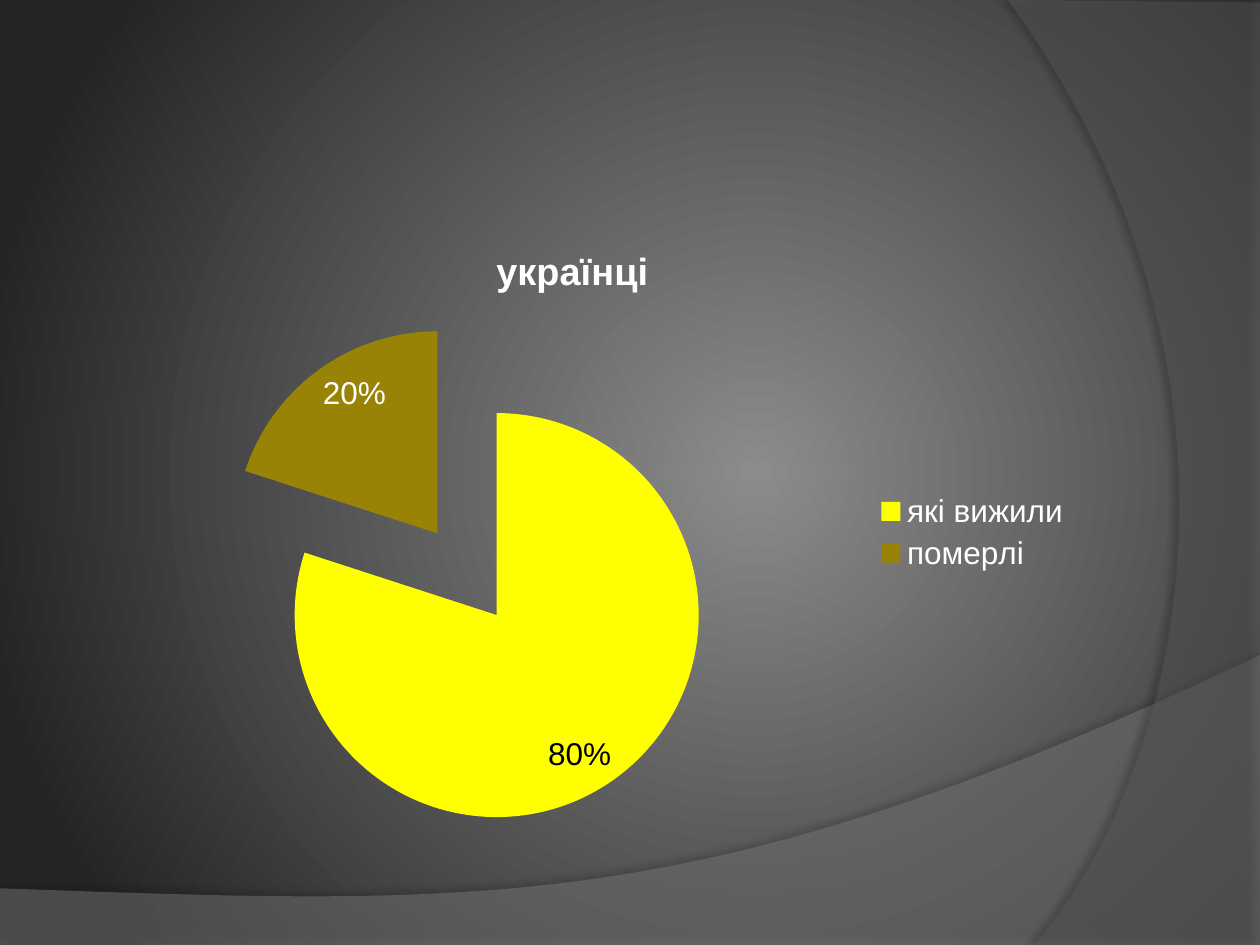
from lxml.etree import SubElement
from pptx import Presentation
from pptx.chart.data import CategoryChartData
from pptx.dml.color import RGBColor
from pptx.enum.chart import XL_CHART_TYPE, XL_LABEL_POSITION, XL_LEGEND_POSITION
from pptx.oxml import parse_xml
from pptx.oxml.ns import nsdecls, qn
from pptx.util import Inches, Pt

HUES = {
    "glow": "8B8B8B", "edge": "252525", "wave": "7F7F7F", "arc": "5E5E5E",
    "alive": "FFFF00", "dead": "998307", "light": "FFFFFF", "dark": "000000",
}
FONT = "Arial"


def style(font, size=18, hue="light", bold=False):
    """Set the face, size, colour and weight of a font."""
    font.name, font.size, font.bold = FONT, Pt(size), bold
    font.color.rgb = RGBColor.from_string(HUES[hue])


def write(frame, text, **form):
    """Put formatted text in a text frame."""
    run = frame.paragraphs[0].add_run()
    run.text = text
    style(run.font, **form)


def backdrop(slide):
    """Fill the background with an off-centre round gradient."""
    stops = "".join(
        f'<a:gs pos="{pos}"><a:srgbClr val="{HUES[hue]}"/></a:gs>'
        for pos, hue in ((0, "glow"), (100000, "edge")))
    back = parse_xml(
        f'<p:bg {nsdecls("p", "a")}><p:bgPr><a:gradFill rotWithShape="1">'
        f'<a:gsLst>{stops}</a:gsLst><a:path path="circle">'
        '<a:fillToRect l="60000" t="50000" r="40000" b="50000"/></a:path>'
        '</a:gradFill><a:effectLst/></p:bgPr></p:bg>')
    slide.element.cSld.insert(0, back)


def curve(start, pull, push, end, steps=60):
    """Return points along a cubic curve."""
    points = []
    for step in range(steps + 1):
        t = step / steps
        parts = ((1 - t) ** 3, 3 * t * (1 - t) ** 2, 3 * t * t * (1 - t), t ** 3)
        nodes = (start, pull, push, end)
        points.append(tuple(
            sum(part * node[axis] for part, node in zip(parts, nodes))
            for axis in (0, 1)))
    return points


def sheet(slide, points, hue, alpha, shade, dist, angle):
    """Draw a translucent outline with a soft shadow."""
    first, *rest = [(Inches(x), Inches(y)) for x, y in points]
    pen = slide.shapes.build_freeform(*first)
    pen.add_line_segments(rest, close=True)
    shape = pen.convert_to_shape()
    shape.fill.solid()
    shape.fill.fore_color.rgb = RGBColor.from_string(HUES[hue])
    shape.line.fill.background()
    shape.shadow.inherit = False
    props = shape.element.spPr
    tint = props.find(qn("a:solidFill"))[0]
    SubElement(tint, qn("a:alpha"), val=str(alpha * 1000))
    cast = SubElement(
        props.find(qn("a:effectLst")), qn("a:outerShdw"), blurRad=str(Pt(4)),
        dist=str(Pt(dist)), dir=str(angle * 60000), algn="tl", rotWithShape="0")
    black = SubElement(cast, qn("a:srgbClr"), val=HUES["dark"])
    SubElement(black, qn("a:alpha"), val=str(shade * 1000))


def waves(slide, wide, high):
    """Draw the bottom wave and the right arc out to the slide edges."""
    low = curve((wide, 5.2), (5.59, 7.29), (3.91, 7.19), (0, 7.05))
    sheet(slide, [(0, high), (wide, high), *low], "wave", 45, 35, 3.5, 270)
    side = curve((8.21, high), (9.35, 6.19), (10.18, 3), (8, 0))
    sheet(slide, [(wide, 0.02), (wide, high), *side], "arc", 40, 45, 4, 180)


def pie(slide, left, top, wide, high):
    """Place the exploded pie chart in the given box."""
    data = CategoryChartData()
    data.categories = ["які вижили ", "померлі "]
    data.add_series("українці ", (80, 20))
    box = [Inches(side) for side in (left, top, wide, high)]
    chart = slide.shapes.add_chart(XL_CHART_TYPE.PIE, *box, data).chart
    style(chart.font)
    chart.has_title = True
    write(chart.chart_title.text_frame, "українці ", size=21.6, bold=True)
    chart.chart_title.include_in_layout = False
    chart.has_legend = True
    chart.legend.position = XL_LEGEND_POSITION.RIGHT
    chart.legend.include_in_layout = False
    style(chart.legend.font)

    plot = chart.plots[0]
    plot.vary_by_categories = True
    series = plot.series[0]
    for spot, hue in enumerate(("alive", "dead")):
        fill = series.points[spot].format.fill
        fill.solid()
        fill.fore_color.rgb = RGBColor.from_string(HUES[hue])
    burst = parse_xml(f'<c:explosion {nsdecls("c")} val="25"/>')
    series._element.find(qn("c:dPt")).addprevious(burst)
    for slice_ in series._element.findall(qn("c:dPt")):
        slice_.find(qn("c:spPr")).addprevious(
            parse_xml(f'<c:explosion {nsdecls("c")} val="25"/>'))

    plot.has_data_labels = True
    labels = plot.data_labels
    labels.show_percentage, labels.show_value = True, False
    labels.number_format, labels.number_format_is_linked = "0%", False
    labels.position = XL_LABEL_POSITION.INSIDE_END
    style(labels.font)
    label = series.points[0].data_label
    style(label.font, hue="dark")
    label.position = XL_LABEL_POSITION.INSIDE_END
    marks = series.data_labels
    marks.show_percentage, marks.show_value = True, False
    marks.number_format, marks.number_format_is_linked = "0%", False
    marks.position = XL_LABEL_POSITION.INSIDE_END
    style(marks.font)
    mark = label._dLbl
    mark.find(qn("c:showVal")).set("val", "0")
    mark.find(qn("c:showPercent")).set("val", "1")


def main():
    """Build and save the slide."""
    deck = Presentation()
    deck.slide_width, deck.slide_height = Inches(10), Inches(7.5)
    slide = deck.slides.add_slide(deck.slide_layouts[6])
    backdrop(slide)
    waves(slide, 10, 7.5)
    pie(slide, 0.5, 1.75, 8.17, 4.95)
    deck.save("out.pptx")


if __name__ == "__main__":
    main()
